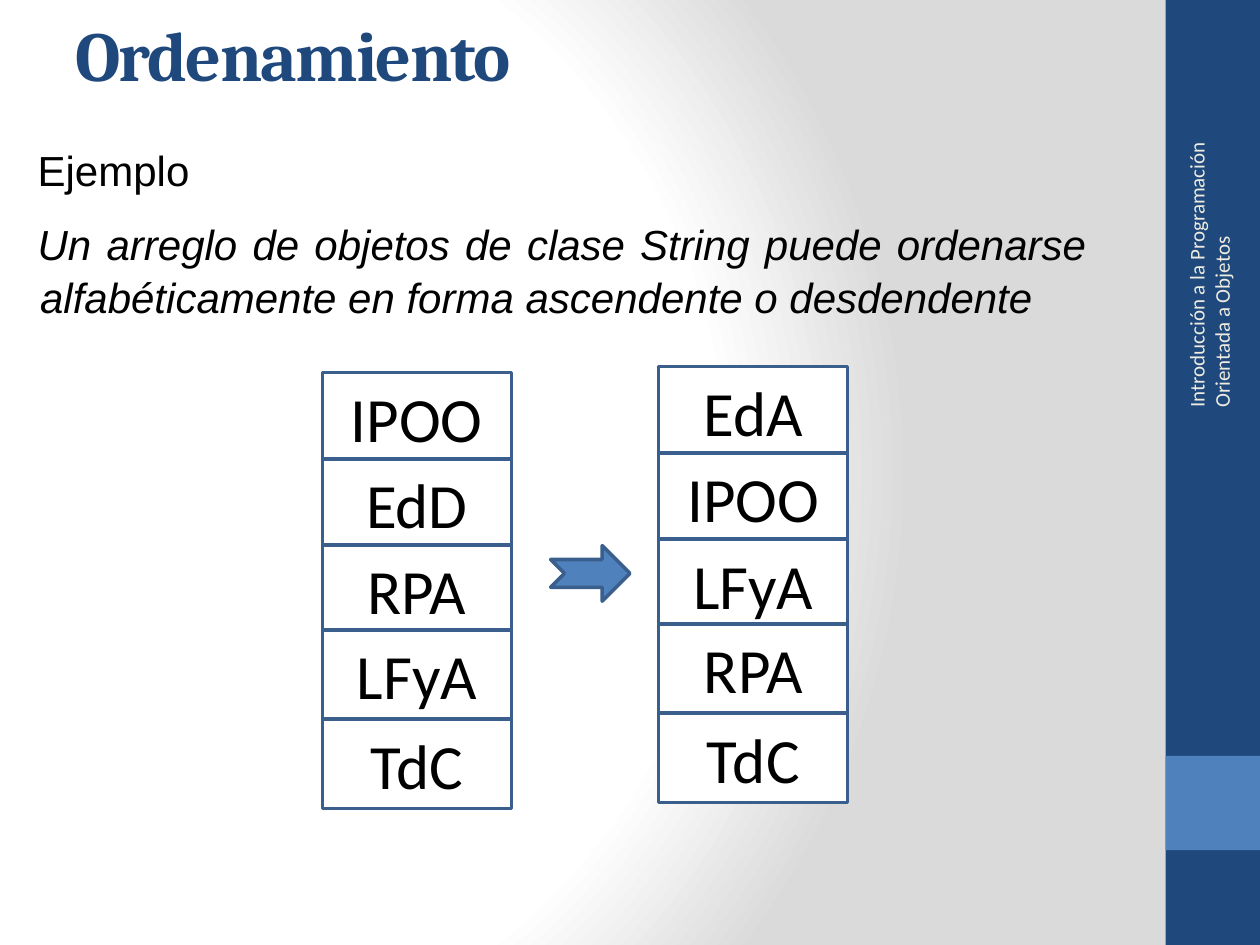
"""Build a slide that shows an array of strings before and after sorting."""
from lxml import etree
from pptx import Presentation
from pptx.dml.color import RGBColor
from pptx.enum.shapes import MSO_SHAPE
from pptx.enum.text import MSO_ANCHOR, PP_ALIGN
from pptx.oxml import parse_xml
from pptx.util import Cm, Pt

RECTANGLE, ARROW = MSO_SHAPE.RECTANGLE, MSO_SHAPE.NOTCHED_RIGHT_ARROW
TOP, MIDDLE = MSO_ANCHOR.TOP, MSO_ANCHOR.MIDDLE
LEFT, CENTER, JUSTIFY = PP_ALIGN.LEFT, PP_ALIGN.CENTER, PP_ALIGN.JUSTIFY

NAVY, BLUE, OUTLINE = "1F497D", "4F81BD", "3A5F8C"
WHITE, GREY, CREAM, BLACK = "FFFFFF", "DADADA", "EEECE1", "000000"
DRAWING = "http://schemas.openxmlformats.org/drawingml/2006/main"

TITLE = "Ordenamiento"
COURSE = "Introducción a la Programación Orientada a Objetos"
BODY = [
    ("Ejemplo", False),
    ("Un arreglo de objetos de clase String puede ordenarse "
     "alfabéticamente en forma ascendente o desdendente", True),
]
ARRAYS = [
    (6.5, 7.51, ["IPOO", "EdD", "RPA", "LFyA", "TdC"]),
    (13.28, 7.39, ["EdA", "IPOO", "LFyA", "RPA", "TdC"]),
]
CELL_OFFSETS = [0, 1.74, 3.48, 5.19, 6.99]
CELL_WIDTH, CELL_HEIGHT = 3.81, 1.8
BACKGROUND_STOPS = [(0, WHITE), (75, WHITE), (100, GREY)]


def color(value):
    return RGBColor.from_string(value)


def set_background(page):
    fill = page.background.fill
    fill.gradient()
    stops = "".join(
        f'<a:gs pos="{position * 1000}"><a:srgbClr val="{value}"/></a:gs>'
        for position, value in BACKGROUND_STOPS)
    gradient = parse_xml(
        f'<a:gradFill xmlns:a="{DRAWING}" rotWithShape="1">'
        f'<a:gsLst>{stops}</a:gsLst><a:path path="circle">'
        '<a:fillToRect l="20000" t="50000" r="100000" b="50000"/>'
        '</a:path></a:gradFill>')
    default = next(page.element.iter(etree.QName(DRAWING, "gradFill").text))
    default.getparent().replace(default, gradient)


def add_span(para, text, size, font, ink, bold=False, italic=False):
    span = para.add_run()
    span.text = text
    span.font.size, span.font.name = Pt(size), font
    span.font.bold, span.font.italic = bold, italic
    span.font.color.rgb = color(ink)
    return span


def add_shape(page, kind, place, fill, line=None):
    shape = page.shapes.add_shape(kind, *map(Cm, place))
    shape.shadow.inherit = False
    shape.fill.solid()
    shape.fill.fore_color.rgb = color(fill)
    if line:
        shape.line.color.rgb = color(line)
        shape.line.width = Pt(2)
    else:
        shape.line.fill.background()
    return shape


def add_box(page, place, anchor):
    box = page.shapes.add_textbox(*map(Cm, place))
    box.text_frame.word_wrap = True
    box.text_frame.vertical_anchor = anchor
    return box


def add_body(page):
    frame = add_box(page, (0.51, 2.74, 21.64, 3.84), TOP).text_frame
    for index, (text, italic) in enumerate(BODY):
        para = frame.add_paragraph() if index else frame.paragraphs[0]
        para.alignment = JUSTIFY
        para.space_before = Pt(12)
        para.line_spacing = 1.05
        properties = para._p.get_or_add_pPr()
        properties.set("marL", str(Cm(0.05)))
        properties.set("indent", str(Cm(-0.05)))
        add_span(para, text, 24, "Arial", BLACK, italic=italic)


def add_array(page, left, top, words):
    for offset, word in zip(CELL_OFFSETS, words):
        place = (left, top + offset, CELL_WIDTH, CELL_HEIGHT)
        cell = add_shape(page, RECTANGLE, place, WHITE, OUTLINE)
        cell.text_frame.vertical_anchor = MIDDLE
        para = cell.text_frame.paragraphs[0]
        para.alignment = CENTER
        add_span(para, word, 36, "Calibri", BLACK)


def main():
    deck = Presentation()
    deck.slide_width, deck.slide_height = Cm(25.4), Cm(19.05)
    page = deck.slides.add_slide(deck.slide_layouts[6])
    set_background(page)

    add_shape(page, RECTANGLE, (23.5, 0, 1.9, 19.05), NAVY)
    add_shape(page, RECTANGLE, (23.5, 15.24, 1.9, 1.9), BLUE)
    course = add_box(page, (20.98, 4.57, 6.78, 1.02), MIDDLE)
    course.rotation = 270
    add_span(course.text_frame.paragraphs[0], COURSE, 12, "Calibri", CREAM)

    title = add_box(page, (1.27, 0.23, 22.81, 1.68), MIDDLE)
    para = title.text_frame.paragraphs[0]
    para.alignment = LEFT
    span = add_span(para, TITLE, 40, "Cambria", NAVY, bold=True)
    span.font._element.set("spc", "-100")

    add_body(page)
    for left, top, words in ARRAYS:
        add_array(page, left, top, words)
    add_shape(page, ARROW, (11.1, 11, 1.6, 1.12), BLUE, OUTLINE)
    deck.save("out.pptx")


if __name__ == "__main__":
    main()
